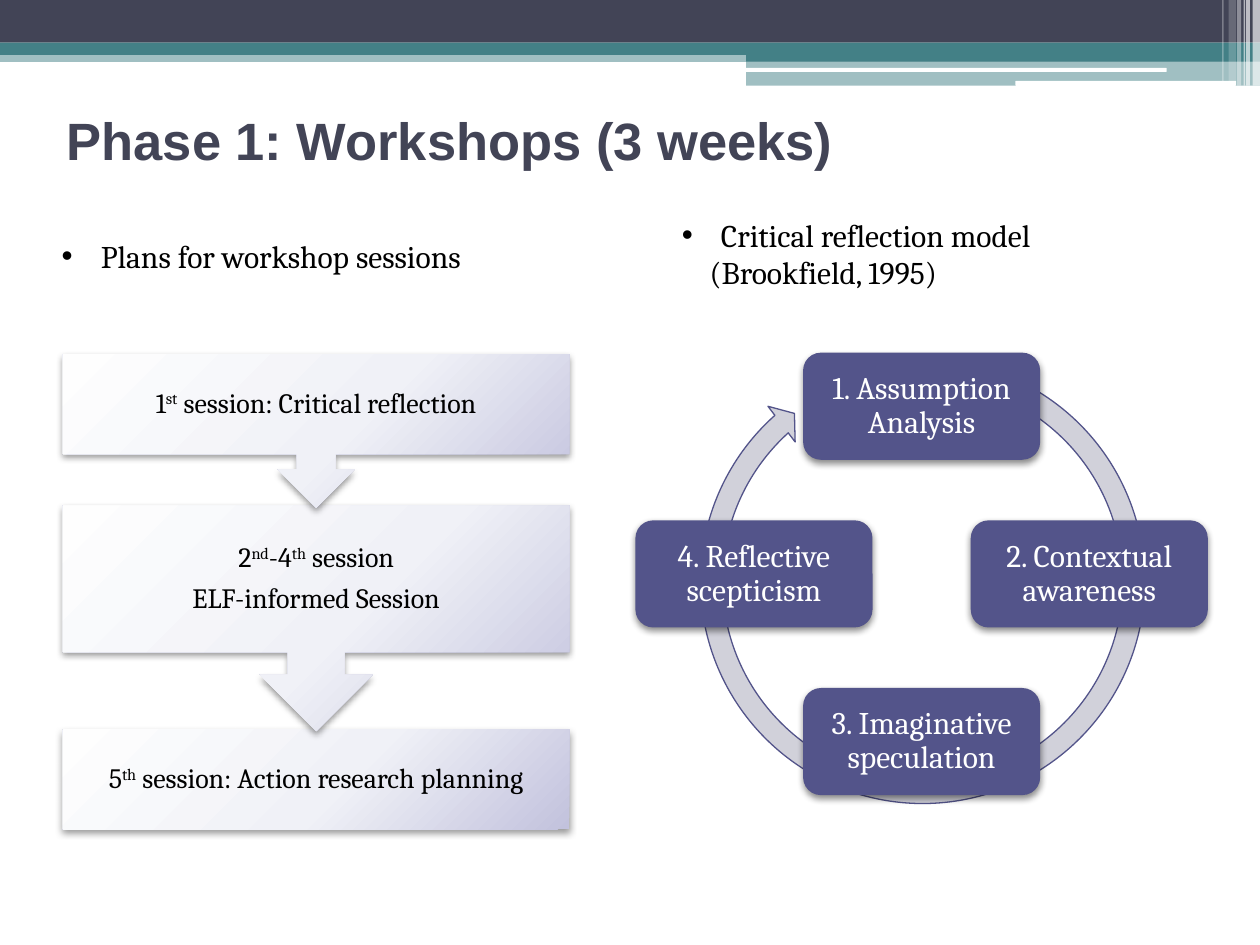
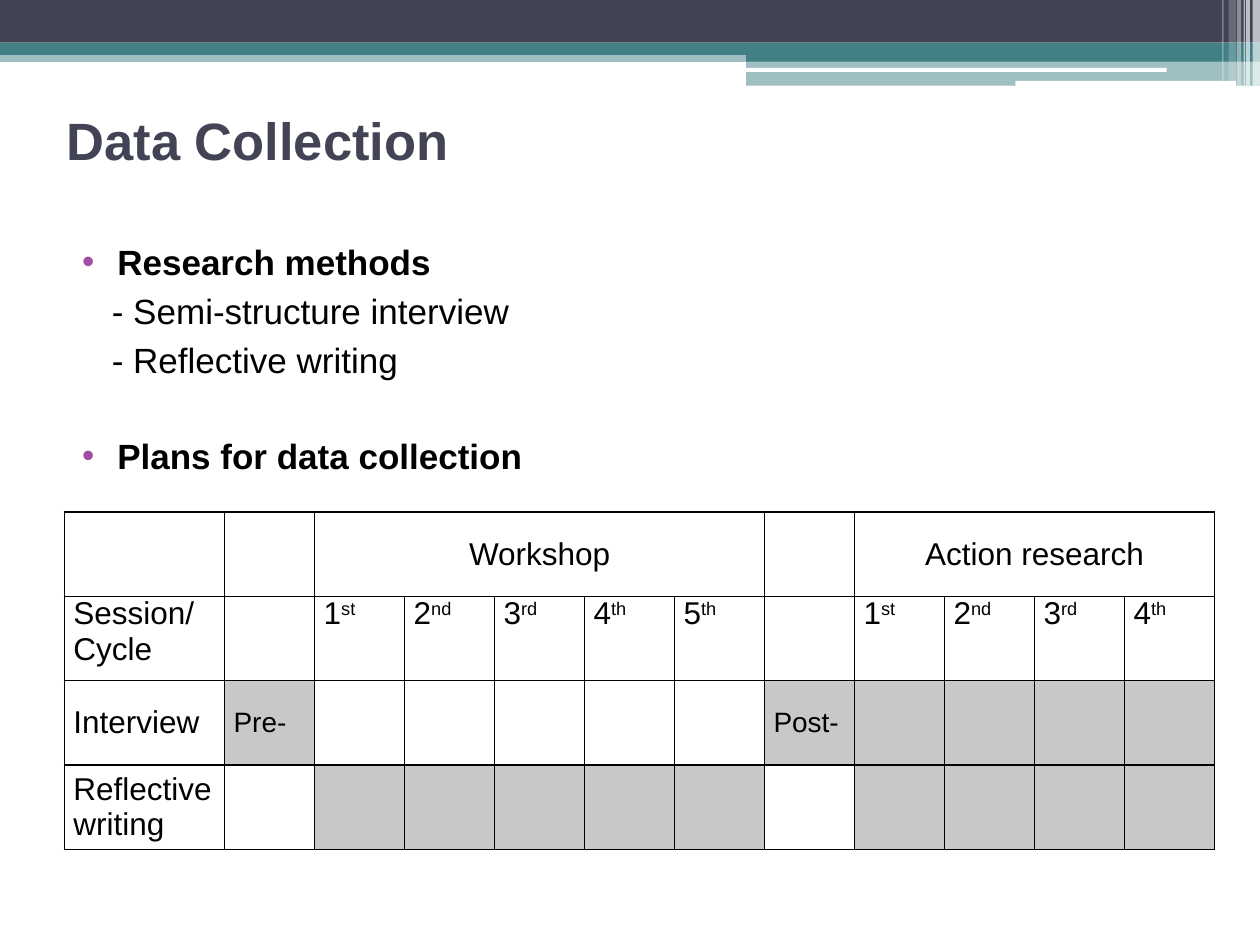
from math import cos, radians, sin

from lxml.etree import SubElement
from pptx import Presentation
from pptx.dml.color import RGBColor
from pptx.enum.shapes import MSO_SHAPE
from pptx.enum.text import MSO_ANCHOR, MSO_AUTO_SIZE, PP_ALIGN
from pptx.oxml.ns import qn
from pptx.util import Cm, Pt

INK, TEAL, WHITE, BLACK = "424456", "438086", "FFFFFF", "000000"
INDIGO, RING, PURPLE, GREY = "53548A", "D1D1DA", "A04DA3", "C8C8C8"
SANS, SERIF = "Arial", "Cambria"
RECT, ROUND = MSO_SHAPE.RECTANGLE, MSO_SHAPE.ROUNDED_RECTANGLE

# Header band: kind, left, top, width, height, colour, opacity in percent
BAND = [
    (RECT, 0, 1.02, 25.4, 0.23, TEAL, 50),
    (RECT, 0, 0, 25.4, 0.86, INK, 100),
    (RECT, 0, 0.86, 25.4, 0.25, TEAL, 100),
    (RECT, 15.04, 0.99, 10.36, 0.25, TEAL, 100),
    (RECT, 15.04, 1.22, 10.36, 0.51, TEAL, 50),
    (ROUND, 15.01, 1.37, 8.51, 0.08, WHITE, 100),
    (ROUND, 20.47, 1.63, 4.45, 0.1, WHITE, 100),
]
# Light stripes at the right end: left, width, height, opacity
STRIPES = [
    (25.25, 0.15, 1.73, 65), (25.12, 0.08, 1.73, 65), (25.07, 0.03, 1.73, 60),
    (24.94, 0.08, 1.73, 40), (24.77, 0.15, 1.63, 20), (24.64, 0.03, 1.63, 30),
]
BAND += [(RECT, x, 0, w, h, WHITE, alpha) for x, w, h, alpha in STRIPES]

# Text between ^ marks is raised
HEADS = [
    ((0.99, 4.65, 12.7, 1.02), ["Plans for workshop sessions"]),
    ((13.49, 4.22, 11.4, 1.8), ["Critical reflection model", "(Brookfield, 1995)"]),
]
CARDS = [
    (MSO_SHAPE.DOWN_ARROW_CALLOUT, 7.14, 3.1, ["1^st^ session: Critical reflection"]),
    (MSO_SHAPE.DOWN_ARROW_CALLOUT, 10.19, 4.55,
     ["2^nd^-4^th^ session", "ELF-informed Session"]),
    (RECT, 14.71, 2.01, ["5^th^ session: Action research planning"]),
]
CYCLE = ["1. Assumption Analysis", "2. Contextual awareness",
         "3. Imaginative speculation", "4. Reflective scepticism"]
ARROW = (0.047, 2.729, 136.86, 174.765, 0.048)

# Text, is a heading, space before in points
METHODS = [
    ("Research methods", True, 3),
    ("- Semi-structure interview", False, 3),
    ("- Reflective writing", False, 3),
    ("Plans for data collection", True, 30),
]
GRID = [
    ["", "", "Workshop", "", "", "", "", "", "Action research", "", "", ""],
    ["Session/Cycle", "", "1^st^", "2^nd^", "3^rd^", "4^th^", "5^th^", "",
     "1^st^", "2^nd^", "3^rd^", "4^th^"],
    ["Interview", "Pre-"] + [""] * 5 + ["Post-"] + [""] * 4,
    ["Reflective writing"] + [""] * 11,
]
SPANS = [(2, 6), (8, 11)]
SHADED = {2: {1, 7, 8, 9, 10, 11}, 3: {2, 3, 4, 5, 6, 8, 9, 10, 11}}


def rgb(code):
    return RGBColor.from_string(code)


def node(parent, tag, **attrs):
    return SubElement(parent, qn(tag), {k: str(v) for k, v in attrs.items()})


def tint(parent, code, alpha=100):
    color = node(parent, "a:srgbClr", val=code)
    if alpha < 100:
        node(color, "a:alpha", val=alpha * 1000)


def place(shape, box):
    for name, value in zip(("left", "top", "width", "height"), box):
        setattr(shape, name, Cm(value))


def draw(slide, kind, box, color, alpha=100):
    """Add a flat shape without outline or shadow."""
    shape = slide.shapes.add_shape(kind, *map(Cm, box))
    shape.fill.solid()
    shape.fill.fore_color.rgb = rgb(color)
    if alpha < 100:
        node(shape.fill._xPr.find(".//" + qn("a:srgbClr")), "a:alpha", val=alpha * 1000)
    shape.line.fill.background()
    shape.shadow.inherit = False
    return shape


def cast(shape, alpha):
    """Give the shape a soft shadow below it."""
    effects = shape._element.spPr.find(qn("a:effectLst"))
    shadow = node(effects, "a:outerShdw", blurRad=Pt(4), dist=Pt(2),
                  dir=5400000, rotWithShape=0)
    tint(shadow, BLACK, alpha)


def shade(shape):
    """Fill with a glow that spreads from beyond the top left corner."""
    shape.fill.gradient()
    grad = shape._element.spPr.find(qn("a:gradFill"))
    for child in list(grad):
        grad.remove(child)
    stops = node(grad, "a:gsLst")
    for pos, code in ((0, "FEFEFE"), (55, "F0F1F7"), (100, "C2C2DD")):
        tint(node(stops, "a:gs", pos=pos * 1000), code)
    glow = node(grad, "a:path", path="circle")
    node(glow, "a:fillToRect", l=-40000, t=-90000, r=140000, b=190000)


def frame(holder, inset=None, anchor=MSO_ANCHOR.TOP):
    text = holder.text_frame
    look = {"word_wrap": True, "auto_size": MSO_AUTO_SIZE.NONE,
            "vertical_anchor": anchor}
    if inset is not None:
        look.update({"margin_" + side: Cm(inset)
                     for side in ("left", "top", "right", "bottom")})
    for name, value in look.items():
        setattr(text, name, value)
    return text


def write(text, lines, font, size, color=BLACK, bold=False, **look):
    """Write one paragraph a line; look holds paragraph formats."""
    for i, line in enumerate(lines):
        par = text.paragraphs[0] if i == 0 else text.add_paragraph()
        for name, value in look.items():
            setattr(par, name, value)
        for j, part in enumerate(line.split("^")):
            if not part:
                continue
            run = par.add_run()
            run.text = part
            form = {"name": font, "size": Pt(size), "bold": bold}
            for name, value in form.items():
                setattr(run.font, name, value)
            run.font.color.rgb = rgb(color)
            if j % 2:
                run._r.get_or_add_rPr().set("baseline", "30000")


def mark(par, left, hang=0, color=None):
    """Indent the paragraph; a hanging one gets a bullet."""
    props = par._p.get_or_add_pPr()
    props.set("marL", str(Cm(left)))
    props.set("indent", str(-Cm(hang)))
    if not hang:
        node(props, "a:buNone")
        return
    tint(node(props, "a:buClr"), color)
    node(props, "a:buFont", typeface=SANS)
    node(props, "a:buChar", char="•")


def start(deck, layout, title):
    slide = deck.slides.add_slide(deck.slide_layouts[layout])
    head = slide.shapes.title
    place(head, (1.09, 1.32, 22.86, 2.97))
    write(frame(head, anchor=MSO_ANCHOR.MIDDLE), [title], SANS, 30, INK, True,
          alignment=PP_ALIGN.LEFT)
    return slide


def brand(deck, slide):
    """Draw the band and move it behind everything on the master."""
    tree = deck.slide_master.shapes._spTree
    for i, (kind, *box, color, alpha) in enumerate(BAND):
        part = draw(slide, kind, box, color, alpha)._element
        part.nvSpPr.cNvPr.set("id", str(100 + i))
        tree.insert(2 + i, part)


def label(shape, lines, size, color, inset):
    write(frame(shape, inset, MSO_ANCHOR.MIDDLE), lines, SERIF, size, color,
          alignment=PP_ALIGN.CENTER, line_spacing=0.9, space_after=Pt(6))


def workshops(slide):
    for holder, (box, lines) in zip(list(slide.placeholders)[1:], HEADS):
        place(holder, box)
        text = frame(holder)
        write(text, lines, SERIF, 18, space_before=Pt(0))
        mark(text.paragraphs[0], 0.79, 0.79, BLACK)
        for par in text.paragraphs[1:]:
            mark(par, 0.56)

    for kind, top, height, lines in reversed(CARDS):
        card = draw(slide, kind, (1.27, top, 10.21, height), WHITE)
        shade(card)
        cast(card, 40)
        label(card, lines, 16, BLACK, 0.3)

    ring = draw(slide, MSO_SHAPE.CIRCULAR_ARROW, (13.89, 7.01, 9.42, 9.42), RING)
    for i, value in enumerate(ARROW):
        ring.adjustments[i] = value
    ring.line.color.rgb = rgb(INDIGO)
    ring.line.width = Pt(0.75)

    wide, high, reach = 4.78, 2.16, 3.38
    for i, step in enumerate(CYCLE):
        turn = radians(90 * i - 90)
        x = 18.58 + reach * cos(turn) - wide / 2
        y = 11.57 + reach * sin(turn) - high / 2
        stage = draw(slide, ROUND, (x, y, wide, high), INDIGO)
        cast(stage, 45)
        label(stage, [step], 18, WHITE, 0.18)


def border(cell):
    props = cell._tc.get_or_add_tcPr()
    for side in "LRTB":
        line = node(props, "a:ln" + side, w=Pt(1))
        tint(node(line, "a:solidFill"), BLACK)


def collect(slide):
    body = slide.placeholders[1]
    place(body, (1.09, 4.72, 22.86, 7.6))
    text = frame(body)
    for i, (line, head, gap) in enumerate(METHODS):
        par = text.paragraphs[0] if i == 0 else text.add_paragraph()
        run = par.add_run()
        run.text = line
        for name, value in {"name": SANS, "size": Pt(20), "bold": head}.items():
            setattr(run.font, name, value)
        run.font.color.rgb = rgb(BLACK)
        par.space_before, par.space_after = Pt(gap), Pt(1)
        if head:
            mark(par, 1.02, 0.71, PURPLE)
        else:
            mark(par, 0.91)

    first, total, high = 3.23, 23.19, 1.7
    rows, cols = len(GRID), len(GRID[0])
    table = slide.shapes.add_table(rows, cols, Cm(1.3), Cm(10.32),
                                   Cm(total), Cm(rows * high)).table
    table.first_row = table.horz_banding = False
    for i, col in enumerate(table.columns):
        col.width = Cm((total - first) / (cols - 1) if i else first)
    for r, row in enumerate(GRID):
        table.rows[r].height = Cm(high)
        for c, words in enumerate(row):
            cell = table.cell(r, c)
            border(cell)
            cell.fill.solid()
            cell.fill.fore_color.rgb = rgb(GREY if c in SHADED.get(r, ()) else WHITE)
            look = {"margin_left": Cm(0.18), "margin_right": Cm(0.18),
                    "margin_top": 0, "margin_bottom": 0,
                    "vertical_anchor": MSO_ANCHOR.TOP if r == 1 else MSO_ANCHOR.MIDDLE}
            for name, value in look.items():
                setattr(cell, name, value)
            write(cell.text_frame, [words], SANS, 16 if words.endswith("-") else 18,
                  alignment=PP_ALIGN.LEFT if r else PP_ALIGN.CENTER)
    for left, right in SPANS:
        table.cell(0, left).merge(table.cell(0, right))


def main():
    deck = Presentation()
    deck.slide_width, deck.slide_height = Cm(25.4), Cm(19.05)
    first = start(deck, 3, "Phase 1: Workshops (3 weeks)")
    brand(deck, first)
    workshops(first)
    collect(start(deck, 1, "Data Collection"))
    deck.save("out.pptx")


if __name__ == "__main__":
    main()
